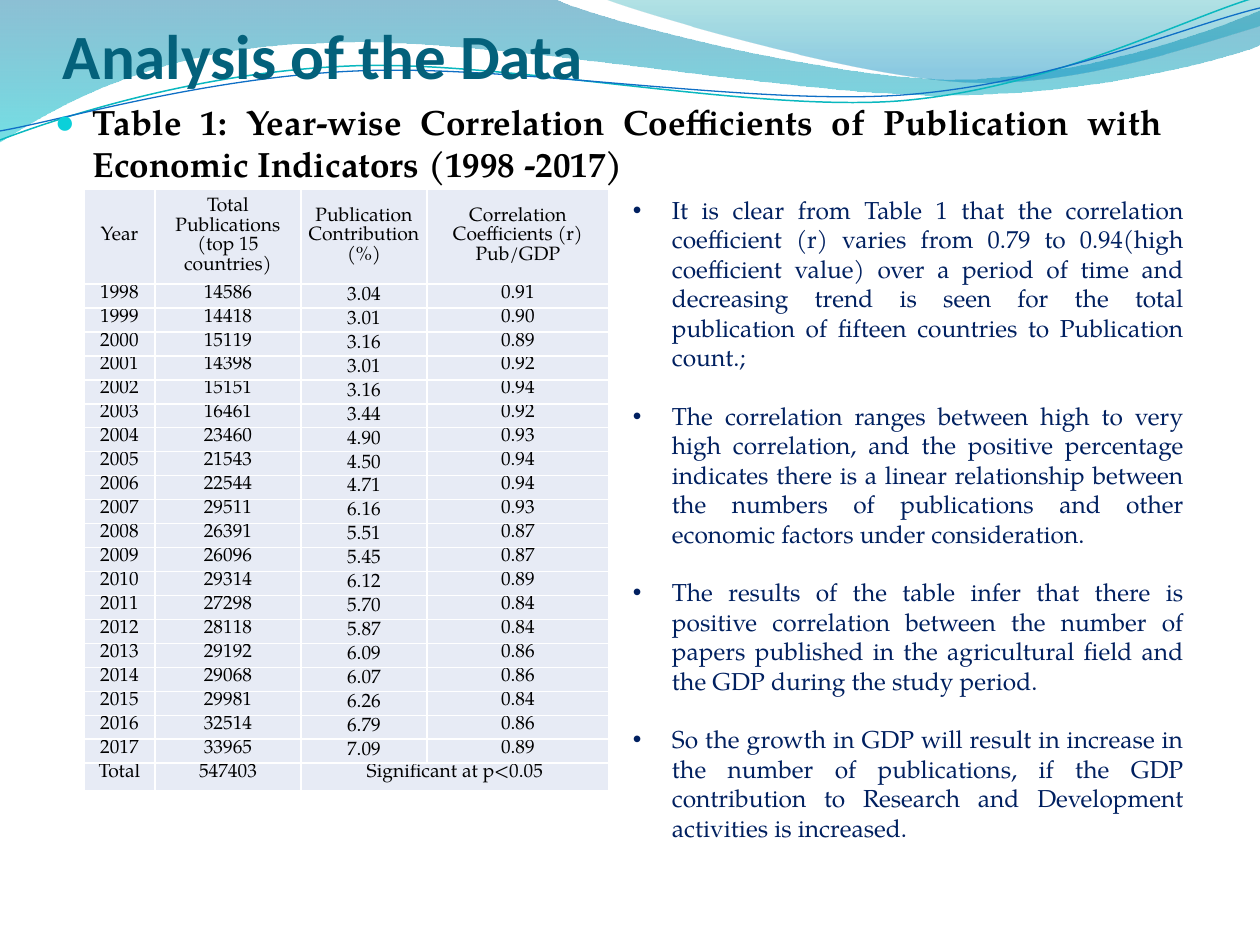
from dataclasses import dataclass
from typing import Optional

from lxml import etree
from pptx import Presentation
from pptx.dml.color import RGBColor
from pptx.enum.text import MSO_ANCHOR, PP_ALIGN
from pptx.oxml.ns import qn
from pptx.util import Pt

EMU_PER_PX = 914400 / 126
CENTER, JUSTIFY, LEFT = PP_ALIGN.CENTER, PP_ALIGN.JUSTIFY, PP_ALIGN.LEFT
TOP, MIDDLE, BOTTOM = MSO_ANCHOR.TOP, MSO_ANCHOR.MIDDLE, MSO_ANCHOR.BOTTOM
SERIF = "TeX Gyre Pagella"


def px(length: float) -> int:
    return round(length * EMU_PER_PX)


def color(value: str) -> RGBColor:
    return RGBColor.from_string(value)


@dataclass
class Stop:
    position: float
    color: str
    opacity: int


@dataclass
class Wave:
    """Steps hold two numbers for a straight line, six for a cubic curve."""
    start: tuple
    steps: list
    stops: tuple = ()
    line_color: str = ""
    line_width: float = 0


@dataclass
class Style:
    size: float
    color: str
    font: str = SERIF
    bold: bool = False


@dataclass
class Bullet:
    character: str
    indent: int
    color: Optional[str] = None
    percent: int = 100


WAVES = [
    Wave((0, 0), [(554, -1), (600, 21, 837, 79, 955, 79),
                  (1075, 79, 1207, 33, 1260, 11), (1261, 45),
                  (1239, 55, 1096, 96, 940, 95), (784, 95, 481, 35, 324, 43),
                  (163, 45, 58, 105, -1, 142)],
         stops=(Stop(0, "0074A1", 45), Stop(1, "00C6CF", 55))),
    Wave((604, -1), [(641, 14, 859, 78, 969, 82),
                     (1079, 87, 1211, 40, 1260, 26), (1260, 0)],
         stops=(Stop(0, "00A1A9", 30), Stop(0.8, "008BBF", 45))),
    Wave((0, 140), [(60, 117, 199, 72, 349, 66), (498, 59, 747, 112, 898, 101),
                    (1050, 89, 1182, 19, 1257, -3)],
         line_color="0AB8BF", line_width=0.85),
    Wave((0, 131), [(59, 121, 207, 77, 357, 71), (508, 64, 752, 106, 903, 95),
                    (1053, 84, 1185, 26, 1260, 8)],
         line_color="0F6FC6", line_width=0.75),
]

HEADERS = ["Year", "Total Publications (top 15 countries)", "Publication Contribution (%)",
           "Correlation\nCoefficients (r)\nPub/GDP"]
FIRST_YEAR = 1998
YEARLY = [
    ("14586", "3.04", "0.91"), ("14418", "3.01", "0.90"), ("15119", "3.16", "0.89"),
    ("14398", "3.01", "0.92"), ("15151", "3.16", "0.94"), ("16461", "3.44", "0.92"),
    ("23460", "4.90", "0.93"), ("21543", "4.50", "0.94"), ("22544", "4.71", "0.94"),
    ("29511", "6.16", "0.93"), ("26391", "5.51", "0.87"), ("26096", "5.45", "0.87"),
    ("29314", "6.12", "0.89"), ("27298", "5.70", "0.84"), ("28118", "5.87", "0.84"),
    ("29192", "6.09", "0.86"), ("29068", "6.07", "0.86"), ("29981", "6.26", "0.84"),
    ("32514", "6.79", "0.86"), ("33965", "7.09", "0.89"),
]
TOTALS = ["Total", "547403", "Significant at p<0.05", ""]
COLUMN_WIDTHS = [71, 146, 126, 182]
ROW_HEIGHTS = [95] + [24] * len(YEARLY) + [28]

FINDINGS = [
    "It is clear from Table 1 that the correlation coefficient (r) varies from 0.79 to 0.94(high "
    "coefficient value) over a period of time and decreasing trend is seen for the total "
    "publication of fifteen countries to Publication count.;",
    "The correlation ranges between high to very high correlation, and the positive percentage "
    "indicates there is a linear relationship between the numbers of publications and other "
    "economic factors under consideration.",
    "The results of the table infer that there is positive correlation between the number of "
    "papers published in the agricultural field and the GDP during the study period.",
    "So the growth in GDP will result in increase in the number of publications, if the GDP "
    "contribution to Research and Development activities is increased.",
]


def build_outline(slide, wave: Wave):
    """Build the outline through all points, then join triples into curves."""
    builder = slide.shapes.build_freeform(*map(px, wave.start))
    for step in wave.steps:
        points = [(px(x), px(y)) for x, y in zip(step[::2], step[1::2])]
        builder.add_line_segments(points, close=False)
    shape = builder.convert_to_shape()
    segments = iter(list(shape._element.iter(qn("a:lnTo"))))
    for step in wave.steps:
        segment = next(segments)
        if len(step) == 6:
            curve = etree.Element(qn("a:cubicBezTo"))
            segment.addprevious(curve)
            for line in (segment, next(segments), next(segments)):
                curve.append(line[0])
                line.getparent().remove(line)
    if wave.stops:
        outline = next(shape._element.iter(qn("a:moveTo"))).getparent()
        etree.SubElement(outline, qn("a:close"))
    return shape


def draw_wave(slide, wave: Wave) -> None:
    shape = build_outline(slide, wave)
    shape.shadow.inherit = False
    if not wave.stops:
        shape.fill.background()
        shape.line.color.rgb = color(wave.line_color)
        shape.line.width = Pt(wave.line_width)
        return
    shape.line.fill.background()
    shape.fill.gradient()
    shape.fill.gradient_angle = 270
    for target, stop in zip(shape.fill.gradient_stops, wave.stops):
        target.position = stop.position
        target.color.rgb = color(stop.color)
    for element, stop in zip(shape._element.iter(qn("a:srgbClr")), wave.stops):
        etree.SubElement(element, qn("a:alpha"), val=str(stop.opacity * 1000))


def add_bullet(paragraph, bullet: Bullet) -> None:
    properties = paragraph._p.get_or_add_pPr()
    properties.set("marL", str(px(bullet.indent)))
    properties.set("indent", str(-px(bullet.indent)))
    if bullet.color:
        bullet_color = etree.SubElement(properties, qn("a:buClr"))
        etree.SubElement(bullet_color, qn("a:srgbClr"), val=bullet.color)
    etree.SubElement(properties, qn("a:buSzPct"), val=str(bullet.percent * 1000))
    etree.SubElement(properties, qn("a:buFont"), typeface="Arial")
    etree.SubElement(properties, qn("a:buChar"), char=bullet.character)


def write(frame, texts: list, style: Style, alignment,
          bullet: Optional[Bullet] = None, before: float = 0, gap: float = 0) -> None:
    for index, text in enumerate(texts):
        paragraph = frame.add_paragraph() if index else frame.paragraphs[0]
        paragraph.alignment = alignment
        paragraph.space_before = Pt(gap if index else before)
        if bullet:
            add_bullet(paragraph, bullet)
        run = paragraph.add_run()
        run.text = text
        run.font.size = Pt(style.size)
        run.font.name = style.font
        run.font.bold = style.bold
        run.font.color.rgb = color(style.color)


def add_text_frame(slide, box: tuple, margins: tuple = (13, 6, 13, 6), anchor=TOP):
    frame = slide.shapes.add_textbox(*map(px, box)).text_frame
    frame.word_wrap = True
    frame.vertical_anchor = anchor
    (frame.margin_left, frame.margin_top,
     frame.margin_right, frame.margin_bottom) = map(px, margins)
    return frame


def add_borders(cell, line_color: str) -> None:
    properties = cell._tc.get_or_add_tcPr()
    for index, side in enumerate(("lnL", "lnR", "lnT", "lnB")):
        line = etree.Element(qn(f"a:{side}"), w=str(Pt(1)))
        fill = etree.SubElement(line, qn("a:solidFill"))
        etree.SubElement(fill, qn("a:srgbClr"), val=line_color)
        properties.insert(index, line)


def draw_table(slide, left: int, top: int) -> None:
    years = [[str(FIRST_YEAR + index), *values] for index, values in enumerate(YEARLY)]
    rows = [HEADERS, *years, TOTALS]
    table = slide.shapes.add_table(len(rows), len(HEADERS), px(left), px(top),
                                   px(sum(COLUMN_WIDTHS)), px(sum(ROW_HEIGHTS))).table
    table.first_row = table.horz_banding = False
    for column, width in zip(table.columns, COLUMN_WIDTHS):
        column.width = px(width)
    last = len(rows) - 1
    for row, (texts, height) in enumerate(zip(rows, ROW_HEIGHTS)):
        table.rows[row].height = px(height)
        for column, text in enumerate(texts):
            cell = table.cell(row, column)
            cell.margin_left = cell.margin_right = px(5)
            cell.margin_top = cell.margin_bottom = 0
            is_middle = row == 0 or (column == 2 and row < last)
            cell.vertical_anchor = MIDDLE if is_middle else TOP
            cell.fill.solid()
            cell.fill.fore_color.rgb = color("E7EBF5")
            add_borders(cell, "FFFFFF")
            if text:
                write(cell.text_frame, text.split("\n"), Style(11, "000000"), CENTER)
    table.cell(last, 2).merge(table.cell(last, 3))


def main() -> None:
    presentation = Presentation()
    presentation.slide_width, presentation.slide_height = px(1260), px(945)
    slide = presentation.slides.add_slide(presentation.slide_layouts[6])

    # Wave decoration along the top
    for wave in WAVES:
        draw_wave(slide, wave)

    # Title and table caption
    title = add_text_frame(slide, (63, 21, 1134, 71), (0, 6, 0, 0), BOTTOM)
    write(title, ["Analysis of the Data"], Style(36, "04617B", "Calibri", True), LEFT)
    caption = add_text_frame(slide, (42, 95, 1134, 136))
    write(caption, ["Table 1: Year-wise Correlation Coefficients of Publication with "
                    "Economic Indicators (1998 -2017)"], Style(20, "000000", bold=True),
          JUSTIFY, bullet=Bullet("●", 38, "0BD0D9", 95), before=4)

    # Table and findings
    draw_table(slide, 84, 189)
    findings = add_text_frame(slide, (620, 189, 577, 665))
    write(findings, FINDINGS, Style(14, "002060"), JUSTIFY, bullet=Bullet("•", 39), gap=16.8)

    presentation.save("out.pptx")


if __name__ == "__main__":
    main()
